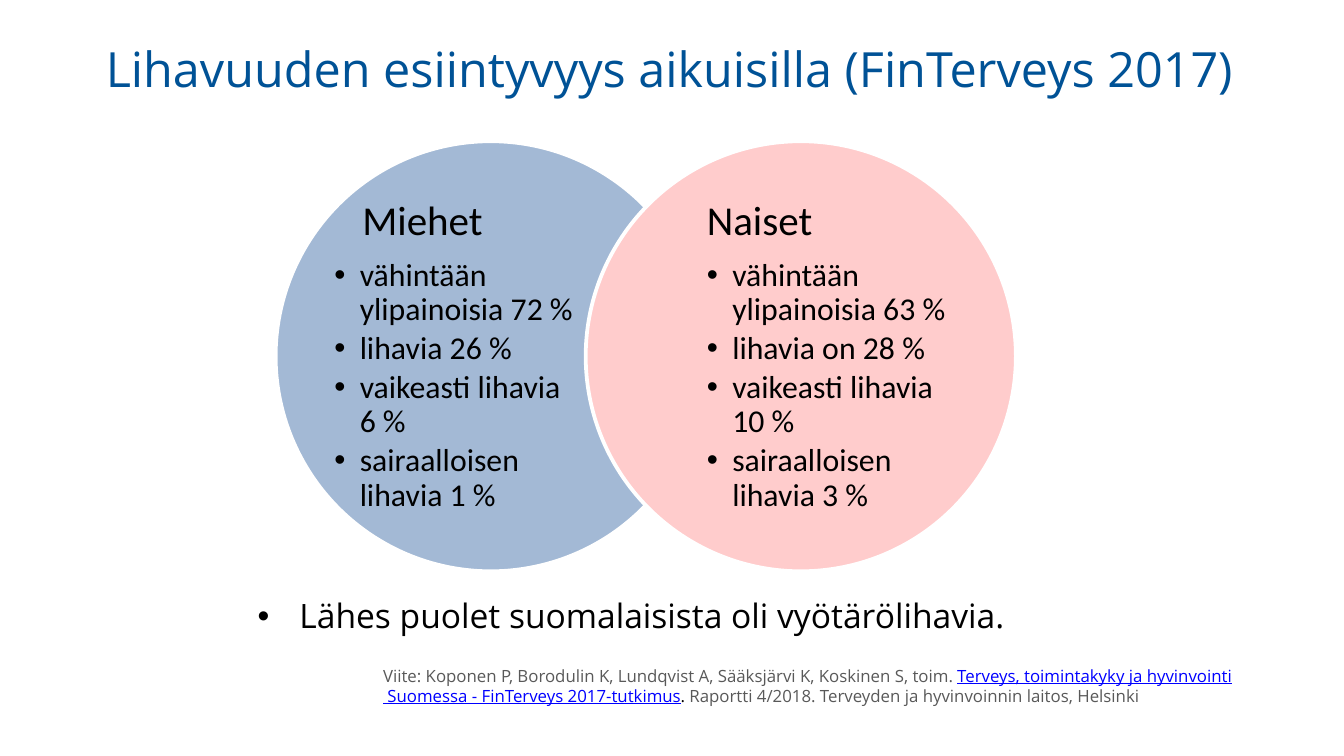
"""Builds a slide comparing obesity among Finnish men and women."""
from lxml import etree
from pptx import Presentation
from pptx.dml.color import RGBColor
from pptx.enum import shapes, text
from pptx.oxml.ns import qn
from pptx.util import Cm, Pt

BLUE = RGBColor(0x00, 0x52, 0x96)
STEEL = RGBColor(0x48, 0x75, 0xAC)
PINK = RGBColor(0xFF, 0xCC, 0xCC)
WHITE = RGBColor(0xFF, 0xFF, 0xFF)
BLACK = RGBColor(0x00, 0x00, 0x00)
GREY = RGBColor(0x59, 0x59, 0x59)
LINK = RGBColor(0x00, 0x00, 0xFF)

TITLE = "Lihavuuden esiintyvyys aikuisilla (FinTerveys 2017)"
GROUPS = [
    {"name": "Miehet", "indent": 0.53, "left": 5.21, "text_left": 6.32,
     "color": STEEL, "opacity": 50,
     "facts": ["vähintään ylipainoisia 72 %", "lihavia 26 %",
               "vaikeasti lihavia 6 %", "sairaalloisen lihavia 1 %"]},
    {"name": "Naiset", "indent": 0, "left": 11.07, "text_left": 13.36,
     "color": PINK, "opacity": 100,
     "facts": ["vähintään ylipainoisia 63 %", "lihavia on 28 %",
               "vaikeasti lihavia 10 %", "sairaalloisen lihavia 3 %"]},
]
SUMMARY = "Lähes puolet suomalaisista oli vyötärölihavia."
REFERENCE = [
    ("Viite: Koponen P, Borodulin K, Lundqvist A, Sääksjärvi K, Koskinen S, toim. ", GREY, False),
    ("Terveys, toimintakyky ja hyvinvointi\n Suomessa - FinTerveys 2017-tutkimus", LINK, True),
    (". ", BLACK, False),
    ("Raportti 4/2018. Terveyden ja hyvinvoinnin laitos, Helsinki", GREY, False),
]

CIRCLE_TOP, CIRCLE_SIZE = 2.67, 8.13
TEXT_TOP, TEXT_WIDTH, TEXT_HEIGHT = 3.63, 4.7, 6.22
HEADING = {"name": "Calibri", "size": Pt(22)}
FACT = {"name": "Calibri", "size": Pt(17)}


def apply(target, values):
    for name, value in values.items():
        setattr(target, name, value)


def add_box(page, left, top, width, height, **frame_format):
    box = page.shapes.add_textbox(Cm(left), Cm(top), Cm(width), Cm(height))
    apply(box.text_frame, {"word_wrap": True, **frame_format})
    return box.text_frame


def add_span(para, words, color, font):
    for number, line in enumerate(words.split("\n")):
        if number:
            para.add_line_break()
        span = para.add_run()
        span.text = line
        apply(span.font, font)
        span.font.color.rgb = color


def indent(para, margin, bullet=False):
    props = para._p.get_or_add_pPr()
    props.set("marL", str(Cm(margin)))
    if bullet:
        props.set("indent", str(-Cm(margin)))
        etree.SubElement(props, qn("a:buFont"), typeface="Arial")
        etree.SubElement(props, qn("a:buChar"), char="•")


def add_circle(page, group):
    circle = page.shapes.add_shape(shapes.MSO_SHAPE.OVAL, Cm(group["left"]), Cm(CIRCLE_TOP),
                                   Cm(CIRCLE_SIZE), Cm(CIRCLE_SIZE))
    circle.shadow.inherit = False
    circle.fill.solid()
    circle.fill.fore_color.rgb = group["color"]
    circle.line.color.rgb = WHITE
    circle.line.width = Pt(2)
    if group["opacity"] < 100:
        color = circle._element.spPr.find(qn("a:solidFill")).find(qn("a:srgbClr"))
        etree.SubElement(color, qn("a:alpha"), val=str(group["opacity"] * 1000))


def add_facts(page, group):
    margins = dict.fromkeys(("margin_left", "margin_top", "margin_right", "margin_bottom"), 0)
    frame = add_box(page, group["text_left"], TEXT_TOP, TEXT_WIDTH, TEXT_HEIGHT,
                    vertical_anchor=text.MSO_ANCHOR.MIDDLE, **margins)
    heading = frame.paragraphs[0]
    indent(heading, group["indent"])
    apply(heading, {"line_spacing": 0.9, "space_after": Pt(7.7)})
    add_span(heading, group["name"], BLACK, HEADING)
    for fact in group["facts"]:
        para = frame.add_paragraph()
        indent(para, 0.48, bullet=True)
        apply(para, {"level": 1, "line_spacing": 0.9, "space_after": Pt(2.55)})
        add_span(para, fact, BLACK, FACT)


def main():
    deck = Presentation()
    apply(deck, {"slide_width": Cm(25.4), "slide_height": Cm(14.29)})
    page = deck.slides.add_slide(deck.slide_layouts[6])

    title = add_box(page, 1.75, 0.61, 23.65, 2.49).paragraphs[0]
    add_span(title, TITLE, BLUE, {"name": "Open Sans", "size": Pt(26)})

    for group in GROUPS:
        add_circle(page, group)
        add_facts(page, group)

    summary = add_box(page, 4.62, 11.13, 15.6, 1.02).paragraphs[0]
    indent(summary, 0.79, bullet=True)
    add_span(summary, SUMMARY, BLACK, {"name": "Open Sans", "size": Pt(18)})

    reference = add_box(page, 6.99, 12.45, 17.98, 1.02).paragraphs[0]
    for words, color, underline in REFERENCE:
        add_span(reference, words, color,
                 {"name": "Open Sans", "size": Pt(9), "underline": underline})

    deck.save("out.pptx")


if __name__ == "__main__":
    main()
